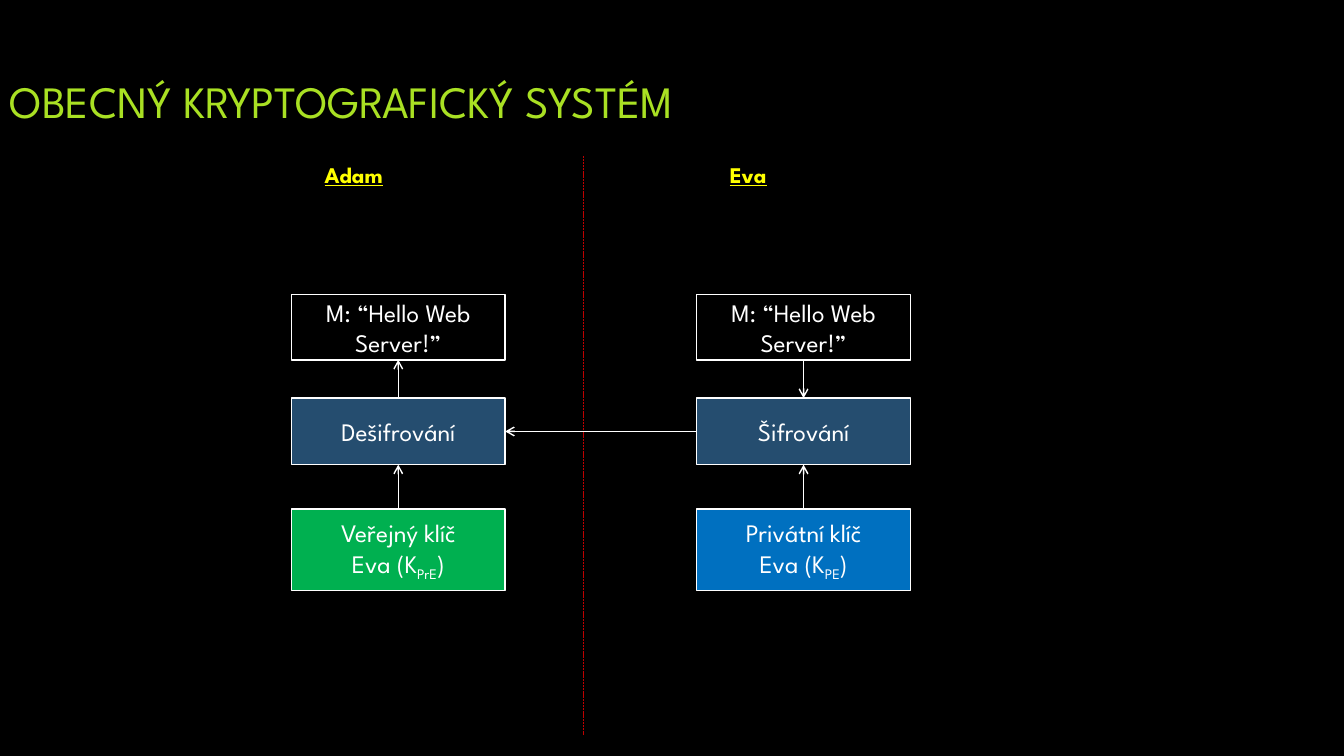
from dataclasses import dataclass

from lxml.etree import SubElement as Sub
from pptx import Presentation
from pptx.dml.color import RGBColor as Rgb
from pptx.enum.dml import MSO_LINE as Dash
from pptx.enum.shapes import MSO_CONNECTOR as Conn, MSO_SHAPE as Shape
from pptx.enum.text import MSO_ANCHOR as Anchor, PP_ALIGN as Align
from pptx.oxml.ns import qn
from pptx.util import Inches, Pt


@dataclass(frozen=True)
class Theme:
    font: str = "League Spartan"
    back: str = "000000"
    title: str = "A9E023"
    name: str = "FFFF00"
    ink: str = "FFFFFF"
    split: str = "C00000"
    step: str = "254D6F"
    open_key: str = "00B050"
    own_key: str = "0070C0"
    title_size: int = 32
    name_size: int = 16
    box_size: int = 18


THEME = Theme()
WIDE, HIGH = 13.33, 7.5
LEFT, PITCH, BOX_W = 2.89, 4.02, 2.12
ROWS = {"text": (2.92, 0.65), "step": (3.95, 0.66), "key": (5.05, 0.81)}
NAME_TOP, NAME_IN = 1.55, 0.23
TOP, SIDE, BASE, FAR = range(4)


def col(index):
    return LEFT + index * PITCH


def style(para, size, color):
    font = para.font
    font.name, font.size = THEME.font, Pt(size)
    font.color.rgb = Rgb.from_string(color)
    return font


def add_text(slide, text, area, size, color):
    frame = slide.shapes.add_textbox(*map(Inches, area)).text_frame
    frame.word_wrap = True
    frame.text = text
    return frame, style(frame.paragraphs[0], size, color)


def add_title(slide, text):
    area = (0, 0.67, WIDE, 0.65)
    frame, _ = add_text(slide, text, area, THEME.title_size, THEME.title)
    frame.vertical_anchor = Anchor.MIDDLE


def add_name(slide, text, index):
    area = (col(index) + NAME_IN, NAME_TOP, 0.92, 0.37)
    _, font = add_text(slide, text, area, THEME.name_size, THEME.name)
    font.bold = font.underline = True


def add_box(slide, index, row, text, fill=None):
    top, high = ROWS[row]
    area = map(Inches, (col(index), top, BOX_W, high))
    box = slide.shapes.add_shape(Shape.RECTANGLE, *area)
    box.shadow.inherit = False
    if fill:
        box.fill.solid()
        box.fill.fore_color.rgb = Rgb.from_string(fill)
    else:
        box.fill.background()
    box.line.color.rgb = Rgb.from_string(THEME.ink)
    box.line.width = Pt(1)
    frame = box.text_frame
    frame.word_wrap = True
    frame.vertical_anchor = Anchor.MIDDLE
    frame.text = text
    para = frame.paragraphs[0]
    para.alignment = Align.CENTER
    style(para, THEME.box_size, THEME.ink)
    return box


def add_key(slide, index, kind, mark, fill):
    """Draw a key box whose symbol K carries a subscript mark."""
    box = add_box(slide, index, "key", f"{kind}\vEva (K", fill)
    para = box.text_frame.paragraphs[0]
    sub = para.add_run()
    sub.text = mark
    sub.font._element.set("baseline", "-25000")
    para.add_run().text = ")"
    return box


def add_line(slide, ends, color, width):
    line = slide.shapes.add_connector(Conn.STRAIGHT, *map(Inches, ends))
    line.line.color.rgb = Rgb.from_string(color)
    line.line.width = Pt(width)
    Sub(line._element.spPr, qn("a:effectLst"))
    return line


def add_arrow(slide, start, out, end, into):
    link = add_line(slide, (0, 0, 0, 0), THEME.ink, 1)
    link.begin_connect(start, out)
    link.end_connect(end, into)
    Sub(link.line._get_or_add_ln(), qn("a:tailEnd"), type="arrow")


def add_side(slide, index, name, step, kind, mark, fill):
    """Draw one party's column and return its message, step and key."""
    add_name(slide, name, index)
    return (
        add_box(slide, index, "text", "M: “Hello Web Server!”"),
        add_box(slide, index, "step", step, THEME.step),
        add_key(slide, index, kind, mark, fill),
    )


def main():
    deck = Presentation()
    deck.slide_width, deck.slide_height = Inches(WIDE), Inches(HIGH)
    slide = deck.slides.add_slide(deck.slide_layouts[6])
    slide.background.fill.solid()
    slide.background.fill.fore_color.rgb = Rgb.from_string(THEME.back)

    add_title(slide, "OBECNÝ KRYPTOGRAFICKÝ SYSTÉM")
    split = add_line(slide, (5.79, NAME_TOP, 5.79, 7.29), THEME.split, 0.5)
    split.line.dash_style = Dash.SQUARE_DOT

    plain, decode, open_key = add_side(
        slide, 0, "Adam", "Dešifrování", "Veřejný klíč", "PrE", THEME.open_key)
    source, encode, own_key = add_side(
        slide, 1, "Eva", "Šifrování", "Privátní klíč", "PE", THEME.own_key)

    add_arrow(slide, source, BASE, encode, TOP)
    add_arrow(slide, own_key, TOP, encode, BASE)
    add_arrow(slide, encode, SIDE, decode, FAR)
    add_arrow(slide, open_key, TOP, decode, BASE)
    add_arrow(slide, decode, TOP, plain, BASE)
    deck.save("out.pptx")


if __name__ == "__main__":
    main()
